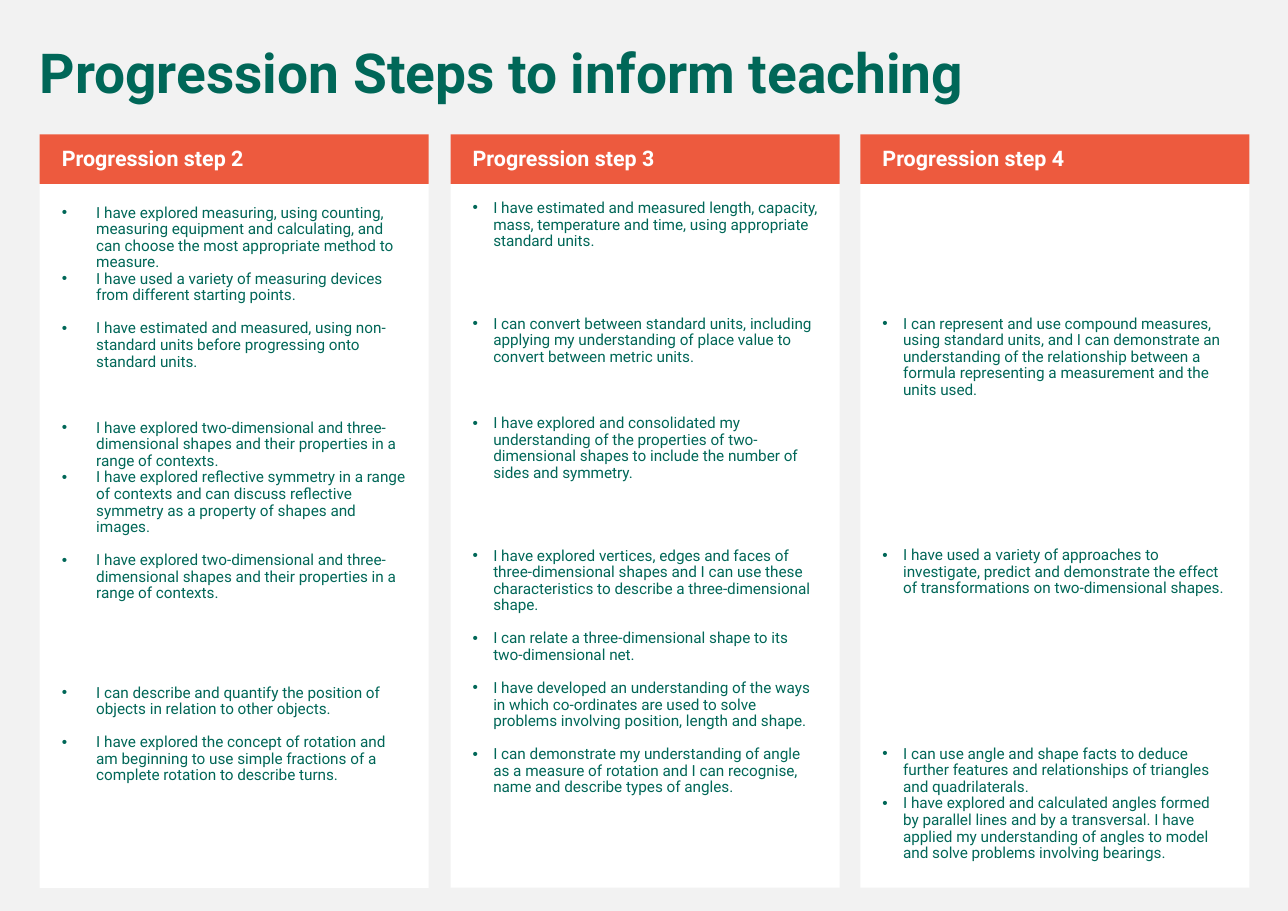
from lxml import etree
from pptx import Presentation
from pptx.dml.color import RGBColor
from pptx.enum.shapes import MSO_SHAPE
from pptx.enum.text import MSO_ANCHOR, PP_ALIGN
from pptx.oxml.ns import qn
from pptx.util import Pt

RECTANGLE = MSO_SHAPE.RECTANGLE
TOP, MIDDLE = MSO_ANCHOR.TOP, MSO_ANCHOR.MIDDLE
LEFT = PP_ALIGN.LEFT

GREY, WHITE, ORANGE, GREEN = "F2F2F2", "FFFFFF", "ED5A3E", "006758"
FONT = "Roboto"
PAGE_WIDTH, PAGE_HEIGHT = 841.68, 595.44
COLUMN_TOP, COLUMN_WIDTH, COLUMN_BOTTOM = 87.8, 254.2, 580.3
HEADER_HEIGHT = 32.4
PADDING = 14.4
LINE = 10.8

# Each statement is paired with the number of empty lines above it.
COLUMNS = [
    {"title": "Progression step 2", "left": 26, "body_top": 119.5, "indent": 22.5, "statements": [
        (0, "I have explored measuring, using counting, measuring equipment and calculating, "
            "and can choose the most appropriate method to measure."),
        (0, "I have used a variety of measuring devices from different starting points."),
        (1, "I have estimated and measured, using non-standard units before progressing onto standard units."),
        (3, "I have explored two-dimensional and three-dimensional shapes and their properties "
            "in a range of contexts."),
        (0, "I have explored reflective symmetry in a range of contexts and can discuss reflective "
            "symmetry as a property of shapes and images."),
        (1, "I have explored two-dimensional and three-dimensional shapes and their properties "
            "in a range of contexts."),
        (5, "I can describe and quantify the position of objects in relation to other objects."),
        (1, "I have explored the concept of rotation and am beginning to use simple fractions "
            "of a complete rotation to describe turns."),
    ]},
    {"title": "Progression step 3", "left": 294.5, "body_top": 116.6, "indent": 13.5, "statements": [
        (0, "I have estimated and measured length, capacity, mass, temperature and time, "
            "using appropriate standard units."),
        (4, "I can convert between standard units, including applying my understanding of place value "
            "to convert between metric units."),
        (3, "I have explored and consolidated my understanding of the properties of two-dimensional "
            "shapes to include the number of sides and symmetry."),
        (4, "I have explored vertices, edges and faces of three-dimensional shapes and I can use these "
            "characteristics to describe a three-dimensional shape."),
        (1, "I can relate a three-dimensional shape to its two-dimensional net."),
        (1, "I have developed an understanding of the ways in which co-ordinates are used to solve "
            "problems involving position, length and shape."),
        (1, "I can demonstrate my understanding of angle as a measure of rotation and I can recognise, "
            "name and describe types of angles."),
    ]},
    {"title": "Progression step 4", "left": 562.3, "body_top": 116.6, "indent": 13.5, "statements": [
        (7, "I can represent and use compound measures, using standard units, and I can demonstrate an "
            "understanding of the relationship between a formula representing a measurement and the units used."),
        (9, "I have used a variety of approaches to investigate, predict and demonstrate the effect of "
            "transformations on two-dimensional shapes."),
        (9, "I can use angle and shape facts to deduce further features and relationships of triangles "
            "and quadrilaterals."),
        (0, "I have explored and calculated angles formed by parallel lines and by a transversal. I have "
            "applied my understanding of angles to model and solve problems involving bearings."),
    ]},
]


def colour(value):
    """Turn a hex string into a colour."""
    return RGBColor.from_string(value)


def add_panel(page, left, top, width, height, fill):
    """Add a plain filled rectangle."""
    panel = page.shapes.add_shape(RECTANGLE, Pt(left), Pt(top), Pt(width), Pt(height))
    panel.shadow.inherit = False
    panel.fill.solid()
    panel.fill.fore_color.rgb = colour(fill)
    panel.line.fill.background()
    return panel


def set_frame(frame, anchor, left, top, right, bottom):
    """Set the anchor and the insets of a text frame."""
    frame.word_wrap = True
    frame.vertical_anchor = anchor
    frame.margin_left, frame.margin_top = Pt(left), Pt(top)
    frame.margin_right, frame.margin_bottom = Pt(right), Pt(bottom)


def write(para, text, size, ink, bold=False):
    """Write and style one paragraph."""
    para.text = text
    para.alignment = LEFT
    para.line_spacing = 0.9
    para.font.name = FONT
    para.font.size = Pt(size)
    para.font.bold = bold
    para.font.color.rgb = colour(ink)


def add_bullet(para, indent):
    """Give a paragraph a bullet with a hanging indent."""
    properties = para._p.get_or_add_pPr()
    properties.set("marL", str(Pt(indent)))
    properties.set("indent", str(-Pt(indent)))
    etree.SubElement(properties, qn("a:buFont")).set("typeface", "Arial")
    etree.SubElement(properties, qn("a:buChar")).set("char", "•")
    for default in properties.findall(qn("a:defRPr")):
        properties.append(default)


def add_title(page, left, top, width, height):
    """Add the page title."""
    frame = page.shapes.add_textbox(Pt(left), Pt(top), Pt(width), Pt(height)).text_frame
    set_frame(frame, MIDDLE, 7.2, 3.6, 7.2, 3.6)
    write(frame.paragraphs[0], "Progression Steps to inform teaching", 36, GREEN, True)


def add_statements(page, left, top, width, height, statements, indent):
    """Add the white panel with its bulleted statements."""
    frame = add_panel(page, left, top, width, height, WHITE).text_frame
    first_gap = statements[0][0] * LINE
    set_frame(frame, TOP, PADDING, PADDING + first_gap, PADDING, PADDING)
    for index, (empty_lines, text) in enumerate(statements):
        para = frame.add_paragraph() if index else frame.paragraphs[0]
        write(para, text, 10, GREEN)
        para.space_before = Pt(empty_lines * LINE if index else 0)
        add_bullet(para, indent)


def add_column(page, left, top, width, bottom, column):
    """Add one progression step: statements below a coloured header."""
    body_top = column["body_top"]
    add_statements(page, left, body_top, width, bottom - body_top, column["statements"], column["indent"])
    frame = add_panel(page, left, top, width, HEADER_HEIGHT, ORANGE).text_frame
    set_frame(frame, MIDDLE, PADDING, 3.6, 7.2, 3.6)
    write(frame.paragraphs[0], column["title"], 14, WHITE, True)


def main():
    """Build the deck and save it."""
    deck = Presentation()
    deck.slide_width, deck.slide_height = Pt(PAGE_WIDTH), Pt(PAGE_HEIGHT)
    page = deck.slides.add_slide(deck.slide_layouts[6])
    page.background.fill.solid()
    page.background.fill.fore_color.rgb = colour(GREY)
    for column in COLUMNS:
        add_column(page, column["left"], COLUMN_TOP, COLUMN_WIDTH, COLUMN_BOTTOM, column)
    add_title(page, 18.8, 26, 797.8, 46.8)
    deck.save("out.pptx")


if __name__ == "__main__":
    main()
